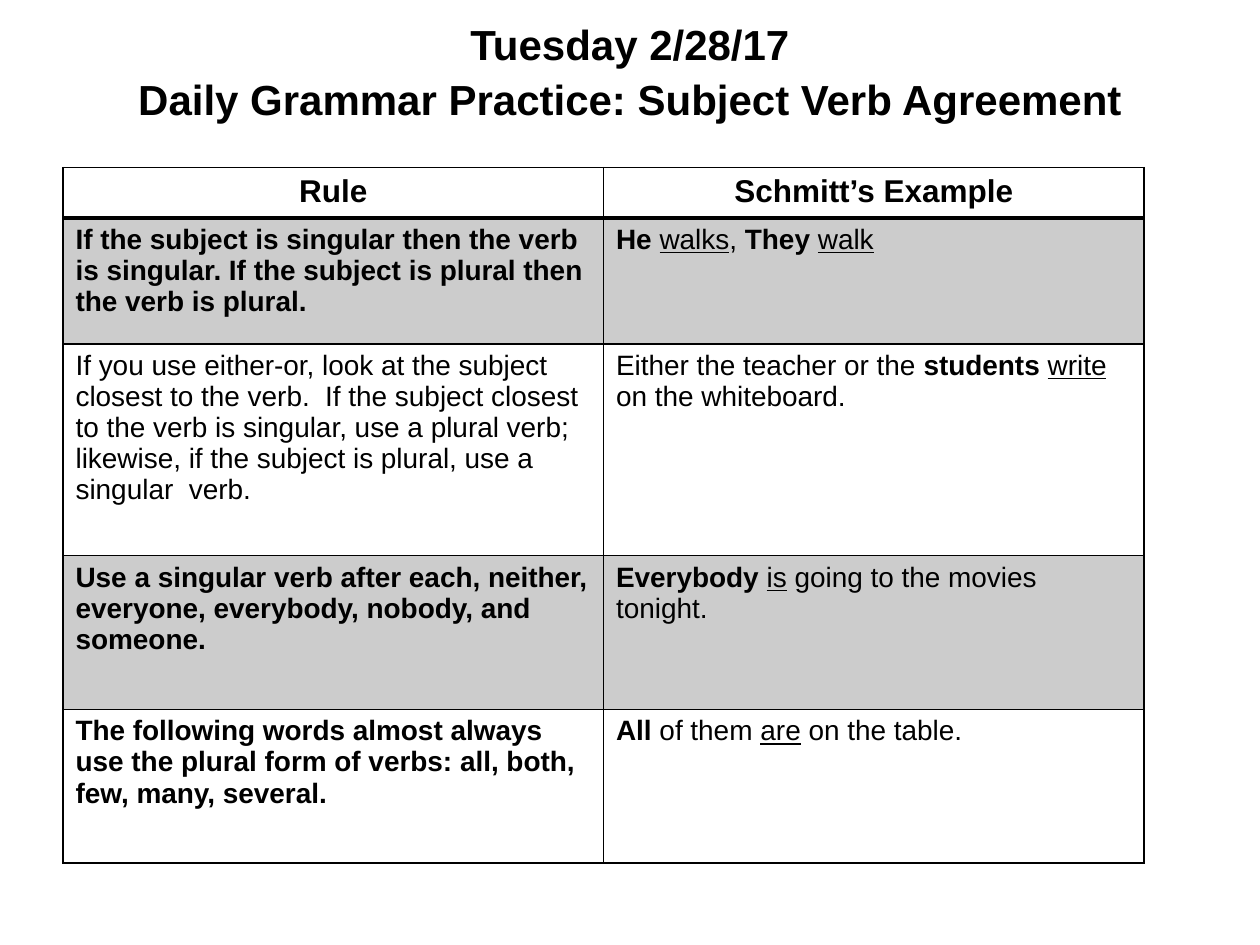
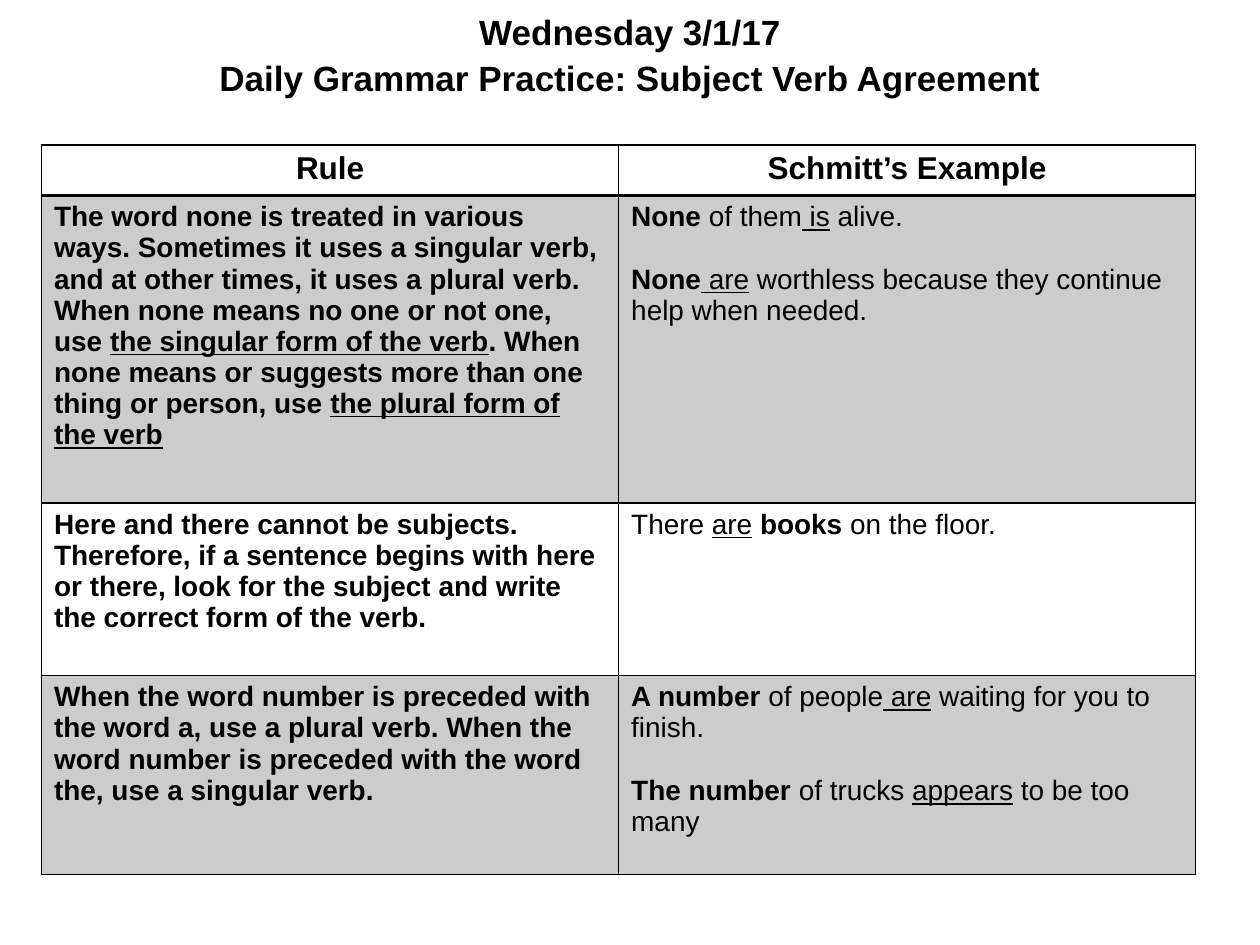
"""Build two grammar practice slides, each with a title and a table of rules."""
from lxml.etree import SubElement
from pptx import Presentation
from pptx.dml.color import RGBColor
from pptx.enum.text import MSO_ANCHOR, PP_ALIGN
from pptx.oxml.ns import qn
from pptx.util import Inches, Pt

FONT = "Arial"
BLACK = "000000"
BAND = "CCCCCC"
TOPIC = "Daily Grammar Practice: Subject Verb Agreement"
HEADINGS = ("*Rule*", "*Schmitt’s Example*")

LESSONS = [
    {
        "date": "Tuesday 2/28/17",
        "title_box": (0.5, -0.08, 9, 1.25),
        "title_size": 24,
        "table_corner": (0.5, 1.33),
        "column_width": 4.29,
        "row_heights": (0.38, 1, 1.68, 1.22, 1.22),
        "rules": [
            ("*If the subject is singular then the verb is singular. "
             "If the subject is plural then the verb is plural.*",
             "*He *_walks_, *They *_walk_"),
            ("If you use either-or, look at the subject closest to the verb.  "
             "If the subject closest to the verb is singular, use a plural verb; "
             "likewise, if the subject is plural, use a singular  verb.",
             "Either the teacher or the *students *_write _on the whiteboard."),
            ("*Use a singular verb after each, neither, everyone, everybody, "
             "nobody, and someone.*",
             "*Everybody *_is_ going to the movies tonight."),
            ("*The following words almost always use the plural form of verbs: "
             "all, both, few, many, several.*",
             "*All* of them _are_ on the table."),
        ],
    },
    {
        "date": "Wednesday 3/1/17",
        "title_box": (0.5, 0, 9, 0.83),
        "title_size": 20,
        "table_corner": (0.33, 1.15),
        "column_width": 4.58,
        "row_heights": (0.38, 2.44, 1.37, 1.58),
        "rules": [
            ("*The word none is treated in various ways. Sometimes it uses a singular "
             "verb, and at other times, it uses a plural verb. When none means no one "
             "or not one, use _the singular form of the verb_. When none means or "
             "suggests more than one thing or person, use _the plural form of the verb_*",
             "*None* of them_ is_ alive.\n"
             "*None*_ are_ worthless because they continue help when needed."),
            ("*Here and there cannot be subjects. Therefore, if a sentence begins with "
             "here or there, look for the subject and write the correct form of the verb.*",
             "There _are_ *books* on the floor."),
            ("*When the word number is preceded with the word a, use a plural verb. "
             "When the word number is preceded with the word the, use a singular verb.*",
             "*A number* of people_ are_ waiting for you to finish.\n"
             "*The number* of trucks _appears_ to be too many"),
        ],
    },
]


def style_paragraph(paragraph, size, alignment):
    paragraph.alignment = alignment
    paragraph.font.name = FONT
    paragraph.font.size = Pt(size)
    paragraph.font.color.rgb = RGBColor.from_string(BLACK)


def write_cell(cell, text, size, alignment):
    """Write lines in which *stars* mean bold and _underscores_ mean underlined."""
    for line_index, line in enumerate(text.split("\n")):
        if line_index:
            paragraph = cell.text_frame.add_paragraph()
            paragraph.space_before = Pt(18)
        else:
            paragraph = cell.text_frame.paragraphs[0]
        style_paragraph(paragraph, size, alignment)
        for bold_index, section in enumerate(line.split("*")):
            for underline_index, part in enumerate(section.split("_")):
                if part:
                    run = paragraph.add_run()
                    run.text = part
                    run.font.bold = bold_index % 2 == 1
                    run.font.underline = underline_index % 2 == 1


presentation = Presentation()
presentation.slide_width = Inches(10)
presentation.slide_height = Inches(7.5)

for lesson in LESSONS:
    slide = presentation.slides.add_slide(presentation.slide_layouts[6])

    title = slide.shapes.add_textbox(*map(Inches, lesson["title_box"])).text_frame
    title.word_wrap = True
    title.vertical_anchor = MSO_ANCHOR.MIDDLE
    title.margin_top = title.margin_bottom = Inches(0.1)
    paragraph = title.paragraphs[0]
    paragraph.text = f"{lesson['date']}\v{TOPIC}"
    paragraph.line_spacing = 1.09
    style_paragraph(paragraph, lesson["title_size"], PP_ALIGN.CENTER)
    paragraph.font.bold = True

    rows = [HEADINGS, *lesson["rules"]]
    left, top = lesson["table_corner"]
    width = lesson["column_width"]
    heights = lesson["row_heights"]
    table = slide.shapes.add_table(
        len(rows), 2, Inches(left), Inches(top), Inches(2 * width), Inches(sum(heights))
    ).table
    table.first_row = False
    table.horz_banding = False
    for column in table.columns:
        column.width = Inches(width)

    for row_index, (texts, height) in enumerate(zip(rows, heights)):
        table.rows[row_index].height = Inches(height)
        is_header = row_index == 0
        size = 18 if is_header else 16
        alignment = PP_ALIGN.CENTER if is_header else PP_ALIGN.LEFT
        heavy_edge = {0: "B", 1: "T"}.get(row_index)
        for column_index, text in enumerate(texts):
            cell = table.cell(row_index, column_index)
            write_cell(cell, text, size, alignment)
            properties = cell._tc.get_or_add_tcPr()
            for edge in "LRTB":
                line_width = Pt(2 if edge == heavy_edge else 1)
                border = SubElement(properties, qn(f"a:ln{edge}"), w=str(line_width))
                SubElement(SubElement(border, qn("a:solidFill")), qn("a:srgbClr"), val=BLACK)
            if row_index % 2:
                cell.fill.solid()
                cell.fill.fore_color.rgb = RGBColor.from_string(BAND)
            else:
                cell.fill.background()

presentation.save("out.pptx")
